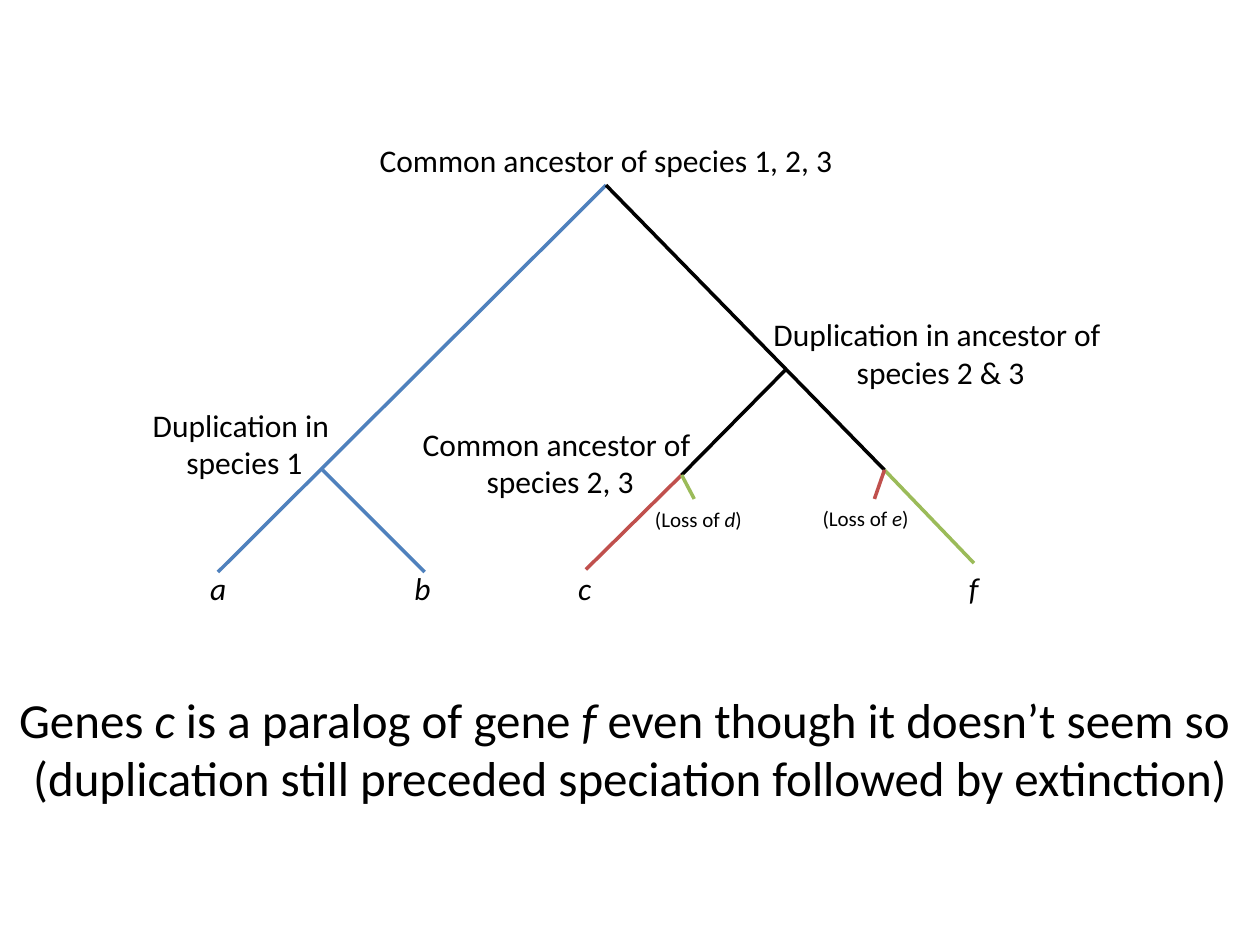
from lxml.etree import SubElement
from pptx import Presentation
from pptx.dml.color import RGBColor
from pptx.enum.shapes import MSO_CONNECTOR
from pptx.enum.text import MSO_AUTO_SIZE, PP_ALIGN
from pptx.oxml.ns import qn
from pptx.util import Inches, Pt

FONT = "Calibri"
BLACK, BLUE, RED, GREEN = "000000", "4F81BD", "C0504D", "9BBB59"


def rgb(color):
    return RGBColor.from_string(color)


def add_text(slide, box, lines, size=18, align=PP_ALIGN.CENTER):
    """Add one paragraph per line; text between underscores is italic."""
    tb = slide.shapes.add_textbox(*map(Inches, box))
    tf = tb.text_frame
    tf.word_wrap = False
    tf.auto_size = MSO_AUTO_SIZE.SHAPE_TO_FIT_TEXT
    for i, line in enumerate(lines):
        p = tf.add_paragraph() if i else tf.paragraphs[0]
        p.alignment = align
        for j, part in enumerate(line.split("_")):
            if part:
                r = p.add_run()
                r.text = part
                r.font.name = FONT
                r.font.size = Pt(size)
                r.font.italic = j % 2 == 1
                r.font.color.rgb = rgb(BLACK)


def add_branch(slide, start, end, color):
    line = slide.shapes.add_connector(
        MSO_CONNECTOR.STRAIGHT, *map(Inches, (*start, *end)))
    line.line.color.rgb = rgb(color)
    line.line.width = Pt(2)
    SubElement(line._element.spPr, qn("a:effectLst"))


def add_gene_tree(slide, left, top):
    nodes = {
        "root": (3.81, 0.47),
        "dup 1": (1.56, 2.73), "dup 2-3": (6.02, 2.74 - 0.8),
        "split c": (4.41, 2.77), "split f": (6.02, 2.73),
        "a": (0.73, 3.54), "b": (2.37, 3.54),
        "c": (3.65, 3.52), "f": (6.73, 3.47),
        "lost d": (4.51, 2.96), "lost e": (5.94, 2.96),
    }
    nodes["dup 2-3"] = (5.23, 1.94)
    branches = [
        ("root", "a", BLUE), ("dup 1", "b", BLUE),
        ("split f", "f", GREEN), ("split c", "c", RED),
        ("root", "split f", BLACK), ("dup 2-3", "split c", BLACK),
        ("split f", "lost e", RED), ("split c", "lost d", GREEN),
    ]
    events = [
        ((1.89, 0.07, 3.84, 0.4), ["Common ancestor of species 1, 2, 3"]),
        ((2.24, 2.32, 2.41, 0.71), ["Common ancestor of ", "species 2, 3"]),
        ((4.99, 1.45, 2.95, 0.71),
         ["Duplication in ancestor of ", "species 2 & 3"]),
        ((0.1, 2.17, 1.68, 0.71), ["Duplication in ", "species 1"]),
    ]
    genes = [("a", 0.57, 0.33), ("b", 2.19, 0.33),
             ("c", 3.49, 0.31), ("f", 6.59, 0.28)]
    losses = [("d", 4.1, 2.97), ("e", 5.43, 2.96)]

    def place(x, y):
        return left + x, top + y

    for start, end, color in branches:
        add_branch(slide, place(*nodes[start]), place(*nodes[end]), color)
    for (x, y, w, h), lines in events:
        add_text(slide, (*place(x, y), w, h), lines)
    for gene, x, w in genes:
        add_text(slide, (*place(x, 3.47), w, 0.4), [f"_{gene}_"],
                 align=PP_ALIGN.LEFT)
    for gene, x, y in losses:
        add_text(slide, (*place(x, y), 0.9, 0.3), [f"(Loss of _{gene}_)"],
                 size=12, align=PP_ALIGN.LEFT)


def add_conclusion(slide, box):
    add_text(slide, box, [
        "Genes _c _is a paralog of gene _f _even though it doesn’t seem so ",
        "(duplication still preceded speciation followed by extinction)",
    ], size=28)


def main():
    prs = Presentation()
    prs.slide_width, prs.slide_height = Inches(10), Inches(7.5)
    slide = prs.slides.add_slide(prs.slide_layouts[6])
    add_gene_tree(slide, 1, 1)
    add_conclusion(slide, (0, 5.42, 10, 1.04))
    prs.save("out.pptx")


if __name__ == "__main__":
    main()
